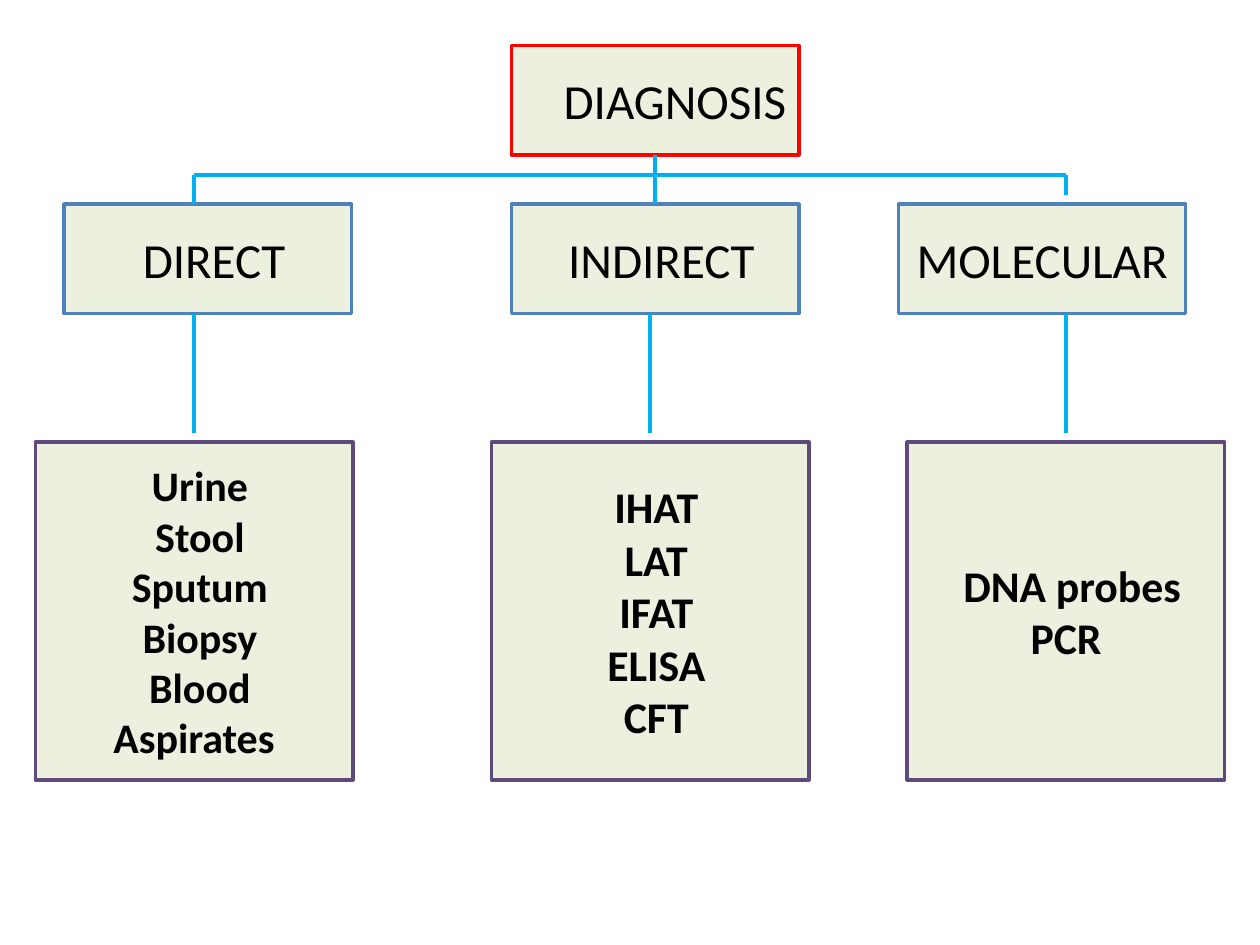
from lxml.etree import SubElement
from pptx import Presentation
from pptx.dml.color import RGBColor
from pptx.enum.shapes import MSO_CONNECTOR, MSO_SHAPE
from pptx.enum.text import MSO_ANCHOR, MSO_AUTO_SIZE, PP_ALIGN
from pptx.oxml.ns import qn
from pptx.util import Inches, Pt

COLORS = {
    "fill": "EBF1DE",
    "root": "FF0000",
    "method": "4F81BD",
    "detail": "604A7B",
    "link": "00B0F0",
    "text": "000000",
}
METHOD_SIZE = (2.28, 0.87)
DETAIL_SIZE = (2.52, 2.68)
ROOT_TOP, BAR_TOP, METHOD_TOP, STEM_END, DETAIL_TOP = 0.36, 1.39, 1.62, 3.44, 3.51
METHOD_BOTTOM = METHOD_TOP + METHOD_SIZE[1]
CENTER_LEFT = 4.06
BRANCHES = [
    {"name": "DIRECT ", "left": 0.51, "detail_left": 0.28, "size": 24, "drop_end": METHOD_TOP,
     "items": ["Urine ", "Stool ", "Sputum ", "Biopsy ", "Blood ", "Aspirates"]},
    {"name": "INDIRECT ", "left": CENTER_LEFT, "detail_left": 3.9, "size": 25, "drop_end": None,
     "items": ["IHAT ", "LAT ", "IFAT ", "ELISA ", "CFT "]},
    {"name": "MOLECULAR", "left": 7.13, "detail_left": 7.2, "size": 25, "drop_end": 1.55,
     "items": ["DNA probes ", "PCR"]},
]


def color(name):
    """Return the named colour."""
    return RGBColor.from_string(COLORS[name])


def write_text(box, lines, size=28, bold=False, align=PP_ALIGN.CENTER):
    """Write right-to-left paragraphs into a box, centred vertically."""
    frame = box.text_frame
    frame.word_wrap = True
    frame.auto_size = MSO_AUTO_SIZE.NONE
    frame.vertical_anchor = MSO_ANCHOR.MIDDLE
    for index, line in enumerate(lines):
        para = frame.paragraphs[0] if index == 0 else frame.add_paragraph()
        para.alignment = align
        para._p.get_or_add_pPr().set("rtl", "1")
        span = para.add_run()
        span.text = line
        span.font.name = "Calibri"
        span.font.size = Pt(size)
        span.font.bold = bold
        span.font.color.rgb = color("text")


def paint_box(box, outline):
    """Give a box the common fill and a coloured outline."""
    box.fill.solid()
    box.fill.fore_color.rgb = color("fill")
    box.line.color.rgb = color(outline)
    box.line.width = Pt(2)


def add_box(page, left, top, extent, outline, lines, **text_format):
    """Add a rectangle with text."""
    box = page.shapes.add_shape(
        MSO_SHAPE.RECTANGLE, Inches(left), Inches(top), *map(Inches, extent))
    box.shadow.inherit = False
    paint_box(box, outline)
    write_text(box, lines, **text_format)
    return box


def place_title(page):
    """Turn the title placeholder into the root box."""
    title = page.shapes.title
    title.left, title.top = Inches(CENTER_LEFT), Inches(ROOT_TOP)
    title.width, title.height = map(Inches, METHOD_SIZE)
    paint_box(title, "root")
    write_text(title, ["DIAGNOSIS "], align=PP_ALIGN.RIGHT)
    return title


def add_link(page, start=(0, 0), end=(0, 0)):
    """Add a straight link between two points."""
    link = page.shapes.add_connector(
        MSO_CONNECTOR.STRAIGHT, *map(Inches, (*start, *end)))
    link.line.color.rgb = color("link")
    link.line.width = Pt(2.25)
    SubElement(link._element.spPr, qn("a:effectLst"))
    return link


def add_branch(page, root, branch):
    """Add a method box, its detail box and the links that lead to them."""
    method = add_box(page, branch["left"], METHOD_TOP, METHOD_SIZE, "method", [branch["name"]])
    add_box(page, branch["detail_left"], DETAIL_TOP, DETAIL_SIZE, "detail",
            branch["items"], size=branch["size"], bold=True)
    middle = branch["detail_left"] + DETAIL_SIZE[0] / 2
    add_link(page, (middle, METHOD_BOTTOM), (middle, STEM_END))
    if branch["drop_end"]:
        add_link(page, (middle, BAR_TOP), (middle, branch["drop_end"]))
    else:
        trunk = add_link(page)
        trunk.begin_connect(root, 2)
        trunk.end_connect(method, 0)
    return middle


def main():
    """Build the diagnosis chart and save it."""
    deck = Presentation()
    deck.slide_width, deck.slide_height = Inches(10), Inches(7.5)
    page = deck.slides.add_slide(deck.slide_layouts[5])
    root = place_title(page)
    middles = [add_branch(page, root, branch) for branch in BRANCHES]
    add_link(page, (middles[0], BAR_TOP), (middles[-1], BAR_TOP))
    deck.save("out.pptx")


if __name__ == "__main__":
    main()
